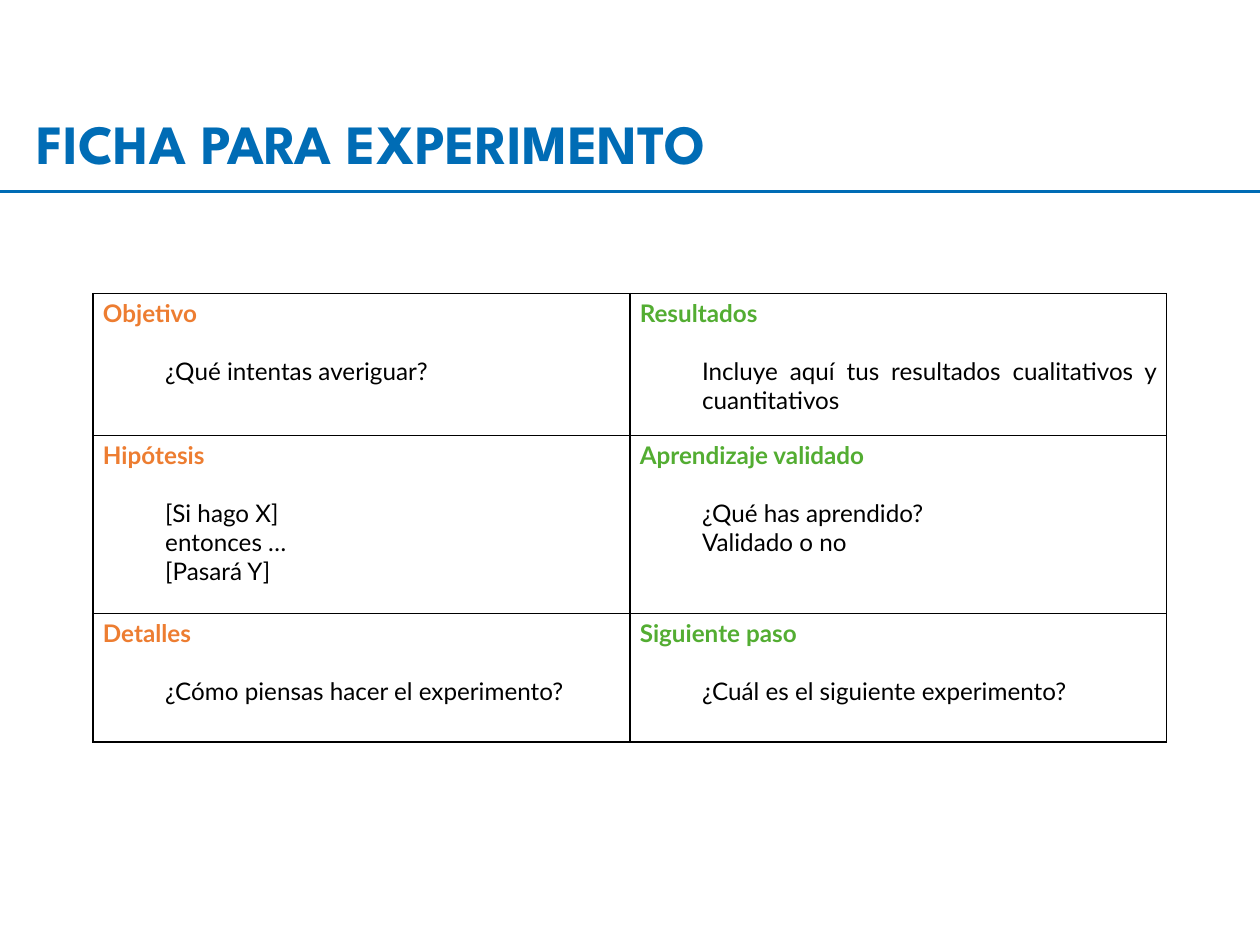
from dataclasses import dataclass

from lxml.etree import SubElement
from pptx import Presentation
from pptx.dml.color import RGBColor as Rgb
from pptx.enum.shapes import MSO_CONNECTOR as Link
from pptx.enum.text import MSO_AUTO_SIZE as Fit, PP_ALIGN as Align
from pptx.oxml.ns import qn
from pptx.util import Cm, Pt


@dataclass(frozen=True)
class Theme:
    """Colours, fonts and type sizes of the slide."""
    blue: str = "006CB5"
    orange: str = "ED7D31"
    green: str = "53AD32"
    black: str = "000000"
    head: str = "League Spartan"
    body: str = "Lato"
    big: float = 32
    small: float = 14
    gap: float = 16.8
    rule: float = 2
    edge: float = 1


THEME = Theme()
ROWS = [
    (2.9, ("Objetivo", ["¿Qué intentas averiguar?"]),
     ("Resultados",
      ["Incluye aquí tus resultados cualitativos y cuantitativos"])),
    (3.63, ("Hipótesis", ["[Si hago X]", "entonces …", "[Pasará Y]"]),
     ("Aprendizaje validado", ["¿Qué has aprendido?", "Validado o no"])),
    (2.62, ("Detalles", ["¿Cómo piensas hacer el experimento?"]),
     ("Siguiente paso", ["¿Cuál es el siguiente experimento?"])),
]


def add_run(para, text, font, size, color, bold=False):
    """Add one styled run to a paragraph."""
    run = para.add_run()
    run.text = text
    run.font.name, run.font.size, run.font.bold = font, Pt(size), bold
    run.font.color.rgb = Rgb.from_string(color)


def add_edges(cell):
    """Draw the four borders of a cell."""
    props = cell._tc.get_or_add_tcPr()
    for side in ("lnL", "lnR", "lnT", "lnB"):
        line = SubElement(props, qn(f"a:{side}"), w=str(Pt(THEME.edge)))
        fill = SubElement(line, qn("a:solidFill"))
        SubElement(fill, qn("a:srgbClr"), val=THEME.black)


def fill_cell(cell, title, lines, color):
    """Write a coloured heading and its indented lines in a cell."""
    add_edges(cell)
    cell.fill.background()
    cell.margin_left = cell.margin_right = Cm(0.2)
    cell.margin_top = cell.margin_bottom = Cm(0.1)
    frame = cell.text_frame
    para = frame.paragraphs[0]
    para.alignment = Align.JUSTIFY
    para.space_after = Pt(THEME.gap)
    add_run(para, title, THEME.body, THEME.small, color, True)
    for text in lines:
        para = frame.add_paragraph()
        para.alignment, para.level = Align.JUSTIFY, 1
        props = para._p.get_or_add_pPr()
        props.set("marL", str(Cm(1.27)))
        props.set("indent", "0")
        add_run(para, text, THEME.body, THEME.small, THEME.black)


def add_header(slide, left, top, width, height):
    """Place the title above a rule at the foot of the box."""
    box = slide.shapes.add_textbox(
        left + Cm(0.5), top, Cm(21.9), height - Cm(0.18))
    frame = box.text_frame
    frame.word_wrap, frame.auto_size = True, Fit.SHAPE_TO_FIT_TEXT
    add_run(frame.paragraphs[0], "FICHA PARA EXPERIMENTO",
            THEME.head, THEME.big, THEME.blue, True)
    foot = top + height
    rule = slide.shapes.add_connector(
        Link.STRAIGHT, left, foot, left + width, foot)
    rule.line.color.rgb = Rgb.from_string(THEME.blue)
    rule.line.width = Pt(THEME.rule)
    SubElement(rule._element.spPr, qn("a:effectLst"))


def add_grid(slide, left, top, width, height):
    """Place the two-column experiment card in the box."""
    grid = slide.shapes.add_table(
        len(ROWS), 2, left, top, width, height).table
    grid.first_row = grid.horz_banding = False
    for col in grid.columns:
        col.width = width // 2
    for i, (tall, *cells) in enumerate(ROWS):
        grid.rows[i].height = Cm(tall)
        for j, (title, lines) in enumerate(cells):
            color = (THEME.orange, THEME.green)[j]
            fill_cell(grid.cell(i, j), title, lines, color)


def main():
    """Build and save the slide."""
    deck = Presentation()
    deck.slide_width, deck.slide_height = Cm(25.7), Cm(19.28)
    slide = deck.slides.add_slide(deck.slide_layouts[6])
    add_grid(slide, Cm(1.9), Cm(5.99), Cm(21.9),
             Cm(sum(row[0] for row in ROWS)))
    add_header(slide, Cm(0), Cm(2.11), deck.slide_width, Cm(1.8))
    deck.save("out.pptx")


if __name__ == "__main__":
    main()
